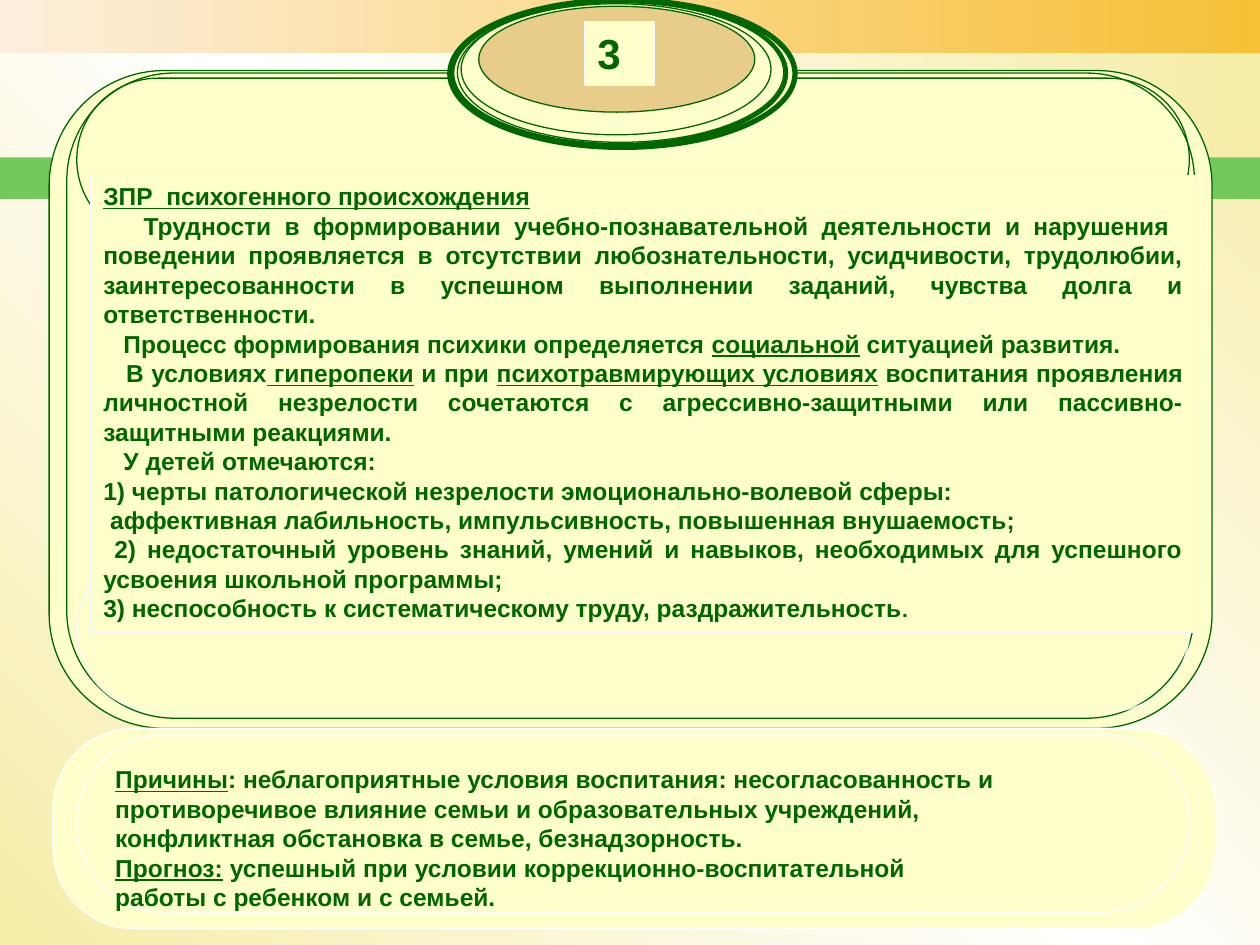
from copy import deepcopy

from lxml import etree
from pptx import Presentation
from pptx import util as u
from pptx.dml.color import RGBColor
from pptx.enum import shapes, text
from pptx.oxml.ns import qn

GREEN = RGBColor(0x00, 0x66, 0x00)
BAND = RGBColor(0x73, 0xC9, 0x5B)
CREAM = RGBColor(0xFF, 0xFF, 0xCC)
STRAW = RGBColor(0xF6, 0xED, 0xA8)
PEACH = RGBColor(0xFD, 0xEF, 0xDD)
AMBER = RGBColor(0xF7, 0xC0, 0x37)
BROWN = RGBColor(0xC4, 0x79, 0x1E)
ICE = RGBColor(0xF2, 0xF7, 0xFC)
WHITE = RGBColor(0xFF, 0xFF, 0xFF)
FONT = "Arial"
COLS, ROWS = 100, 75

RECT = shapes.MSO_SHAPE.RECTANGLE
ROUND = shapes.MSO_SHAPE.ROUNDED_RECTANGLE
OVAL = shapes.MSO_SHAPE.OVAL
LEFT, JUST = text.PP_ALIGN.LEFT, text.PP_ALIGN.JUSTIFY


def add_run(para, words, size=14, line=False):
    run = para.add_run()
    run.text = words
    font = run.font
    font.name, font.size, font.bold = FONT, u.Pt(size), True
    font.underline = line
    font.color.rgb = GREEN


def write(shape, lines, size=14, align=LEFT, wrap=True, top=0.05):
    """Fill a shape with (indent, words) lines; words between _ are underlined."""
    frame = shape.text_frame
    frame.word_wrap = wrap
    frame.auto_size = text.MSO_AUTO_SIZE.NONE
    frame.vertical_anchor = text.MSO_ANCHOR.TOP
    frame.margin_left = frame.margin_right = u.Inches(0.1)
    frame.margin_top = u.Inches(top)
    for i, (indent, words) in enumerate(lines):
        para = frame.add_paragraph() if i else frame.paragraphs[0]
        props = para._p.get_or_add_pPr()
        props.set("marL", "0")
        props.set("indent", str(u.Inches(indent)))
        etree.SubElement(props, qn("a:buNone"))
        para.space_before = u.Pt(0)
        para.alignment = align
        for j, part in enumerate(words.split("_")):
            if part:
                add_run(para, part, size, line=j % 2 == 1)
    return para


def blend(fill, owner, colors, angle=0):
    """Spread the colours evenly along a linear gradient."""
    fill.gradient()
    fill.gradient_angle = angle
    stops = owner.find(".//" + qn("a:gsLst"))
    for _ in colors[2:]:
        stops.insert(1, deepcopy(stops[0]))
    for i, (stop, color) in enumerate(zip(fill.gradient_stops, colors)):
        stop.color.rgb = color
        stop.position = i / (len(colors) - 1)


class Page:
    def __init__(self, deck):
        self.wide = deck.slide_width / COLS
        self.high = deck.slide_height / ROWS
        self.slide = deck.slides.add_slide(deck.slide_layouts[1])

    def cells(self, box):
        x, y, w, h = box
        return (round(x * self.wide), round(y * self.high),
                round(w * self.wide), round(h * self.high))

    def paint(self, shape, fill, edge, width, alpha=None):
        if fill is None:
            shape.fill.background()
        elif isinstance(fill, list):
            blend(shape.fill, shape._element, fill)
        else:
            shape.fill.solid()
            shape.fill.fore_color.rgb = fill
        if alpha:
            color = shape._element.spPr.find(".//" + qn("a:srgbClr"))
            etree.SubElement(color, qn("a:alpha"), val=str(alpha * 1000))
        if edge is None:
            shape.line.fill.background()
        else:
            shape.line.color.rgb = edge
            shape.line.width = u.Pt(width)

    def backdrop(self, colors, angle):
        blend(self.slide.background.fill, self.slide._element, colors, angle)

    def shape(self, kind, box, fill=None, edge=None, width=0.75, bend=None, alpha=None):
        shape = self.slide.shapes.add_shape(kind, *self.cells(box))
        shape.shadow.inherit = False
        if bend is not None:
            shape.adjustments[0] = bend
        self.paint(shape, fill, edge, width, alpha)
        return shape

    def holder(self, index, box):
        """Bring a template placeholder to the front as a framed panel."""
        shape = self.slide.placeholders[index]
        shape.left, shape.top, shape.width, shape.height = self.cells(box)
        self.paint(shape, CREAM, ICE, 0.75)
        self.slide.shapes._spTree.append(shape._element)
        return shape


CAUSES = [
    "_Причины_: неблагоприятные условия воспитания: несогласованность и",
    "противоречивое влияние семьи и образовательных учреждений,",
    "конфликтная обстановка в семье, безнадзорность.",
    "_Прогноз:_ успешный при условии коррекционно-воспитательной",
    "работы с ребенком и с семьей.",
]

TRAITS = [
    (0, "_ЗПР  психогенного происхождения_"),
    (0.32, "Трудности в формировании учебно-познавательной деятельности и нарушения  "
           "поведении проявляется в отсутствии любознательности, усидчивости, трудолюбии, "
           "заинтересованности в успешном выполнении заданий, чувства долга и "
           "ответственности."),
    (0.16, "Процесс формирования психики определяется _социальной_ ситуацией развития."),
    (0.18, "В условиях_ гиперопеки_ и при _психотравмирующих условиях_ воспитания "
           "проявления личностной незрелости сочетаются с агрессивно-защитными или "
           "пассивно-защитными реакциями."),
    (0.16, "У детей отмечаются:"),
    (0, "1) черты патологической незрелости эмоционально-волевой сферы:"),
    (0, " аффективная лабильность, импульсивность, повышенная внушаемость;"),
    (0, " 2) недостаточный уровень знаний, умений и навыков, необходимых для успешного "
        "усвоения школьной программы;"),
    (0, "3) неспособность к систематическому труду, раздражительность"),
]


def main():
    deck = Presentation()
    deck.slide_width, deck.slide_height = u.Inches(10), u.Inches(7.5)
    page = Page(deck)

    page.backdrop([STRAW, WHITE, STRAW], 45)
    page.shape(RECT, (0, 0, 100, 4.2), [PEACH, AMBER])
    page.shape(RECT, (21.7, 4.2, 78.3, 8.3), [WHITE, STRAW])
    page.shape(RECT, (0, 12.5, 100, 3.3), BAND)

    for box, fill, edge, bend in (
        ((3.9, 5.6, 92.3, 52.2), CREAM, GREEN, 0.175),
        ((5.3, 5.8, 89.5, 51.2), CREAM, GREEN, 0.167),
        ((6.1, 43.5, 88.3, 13), None, ICE, 0.5),
        ((6.1, 6.2, 88.3, 12.9), None, GREEN, 0.5),
        ((4.2, 57.8, 92.3, 15.9), CREAM, WHITE, 0.404),
    ):
        page.shape(ROUND, box, fill, edge, bend=bend)
    causes = page.shape(ROUND, (6.1, 58.3, 88.3, 14.1), CREAM, WHITE, bend=0.5)
    write(causes, [(0, words) for words in CAUSES], top=0.03)

    for box, fill, width, alpha in (
        ((35.7, 0, 27.4, 11.7), CREAM, 3, None),
        ((35.9, 0.1, 26.5, 11.4), CREAM, 2.25, None),
        ((36.3, 0.2, 25.9, 11.1), None, 0.75, None),
        ((36.6, 0.3, 24.6, 10.4), CREAM, 0.75, 48),
        ((38, 0.5, 21.9, 8.4), BROWN, 0.75, 38),
    ):
        page.shape(OVAL, box, fill, GREEN, width, alpha=alpha)

    write(page.holder(0, (46.4, 1.7, 5.5, 5.1)), [(0, "3")], size=24, wrap=False)
    body = page.holder(1, (7.2, 13.9, 87.7, 36.3))
    last = write(body, TRAITS, align=JUST)
    add_run(last, ".", size=12)
    body.text_frame.paragraphs[0].alignment = LEFT

    deck.save("out.pptx")


if __name__ == "__main__":
    main()
